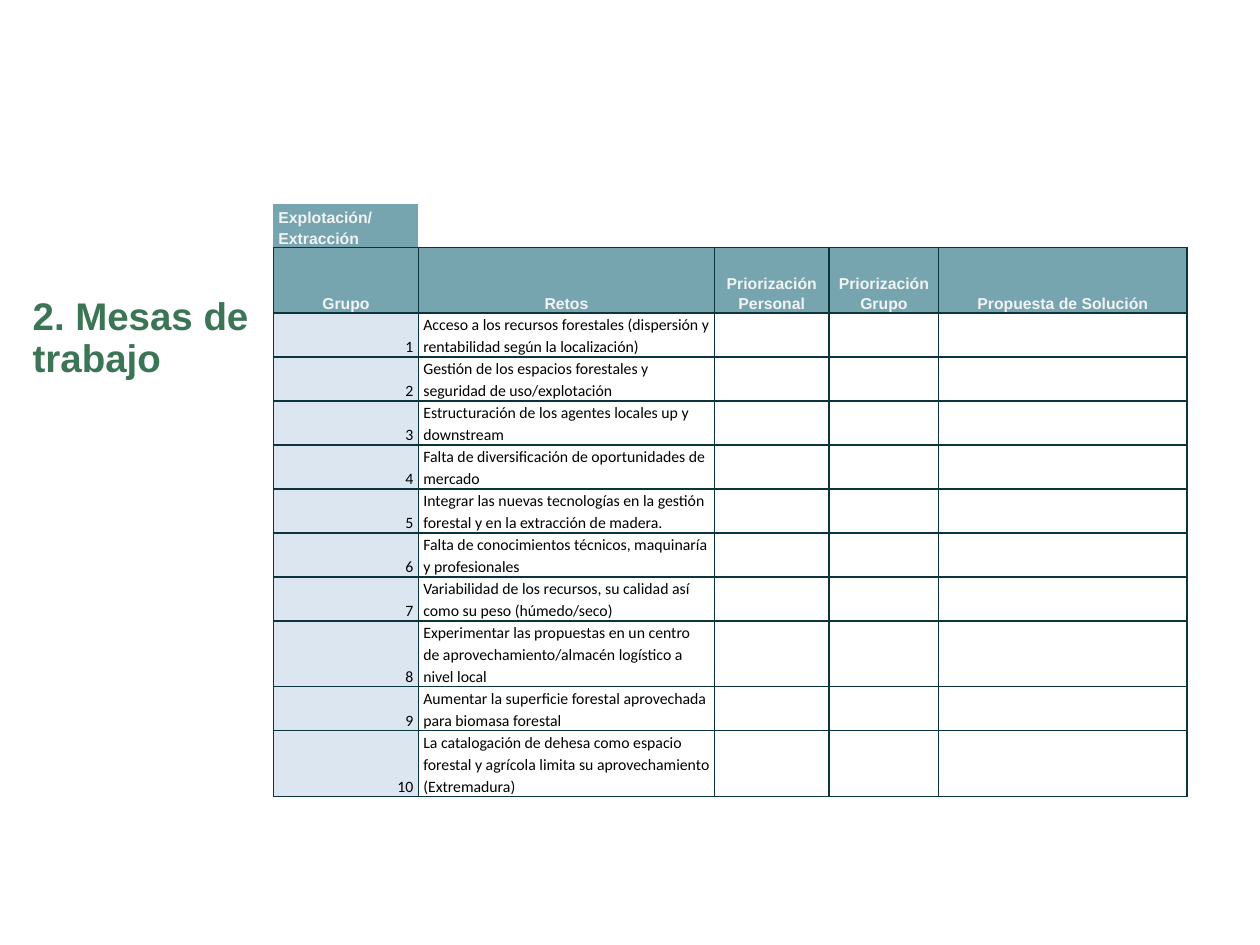
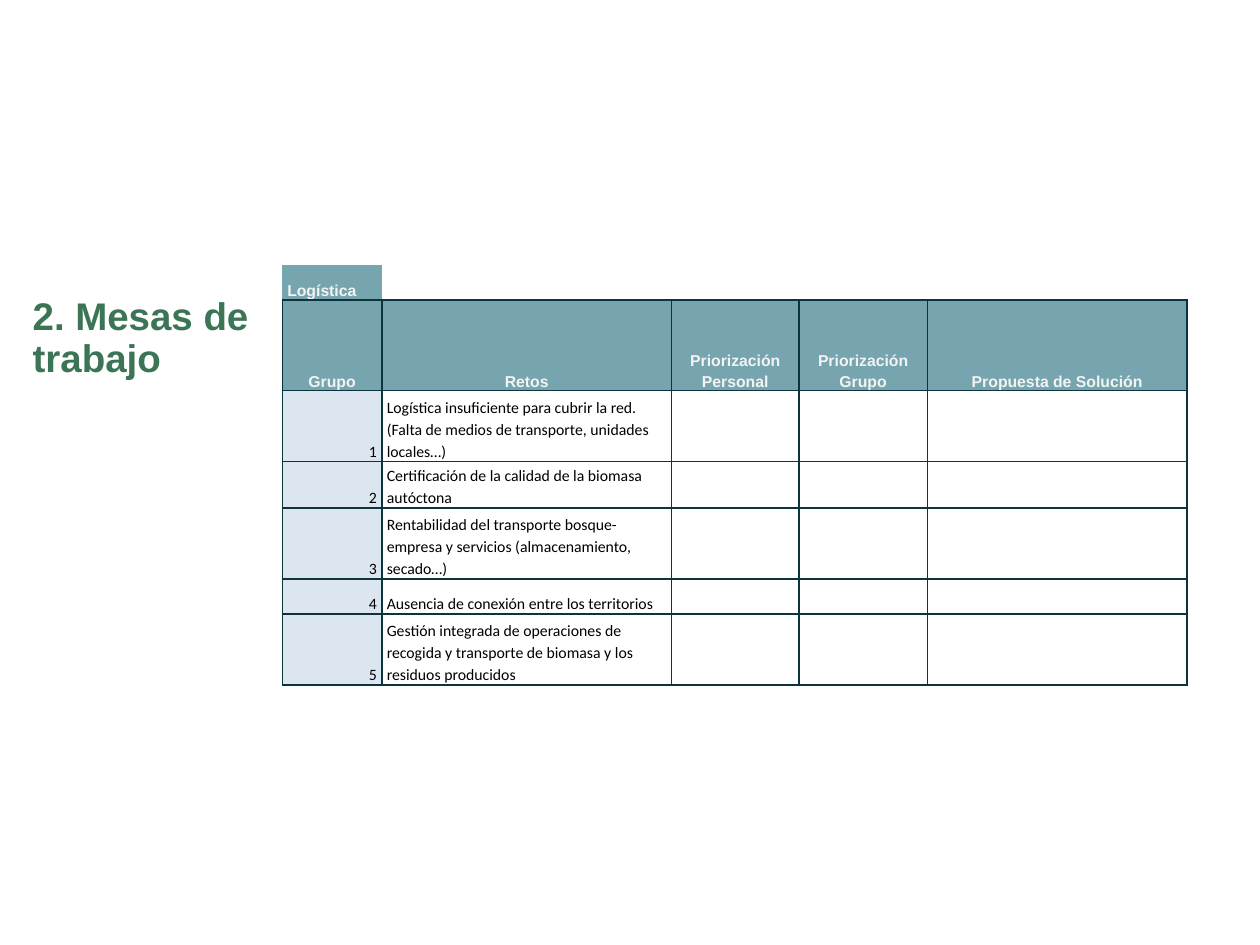
from lxml.etree import SubElement as Sub
from pptx import Presentation
from pptx.dml.color import RGBColor as Color
from pptx.enum.text import MSO_ANCHOR as Anchor, MSO_AUTO_SIZE as Auto, PP_ALIGN as Align
from pptx.oxml.ns import qn
from pptx.util import Inches, Pt

HUES = {"title": "3B7555", "line": "0C343D", "head": "76A5AF",
        "num": "DCE6F1", "light": "F3F3F3", "dark": "000000"}
WIDTH, HEIGHT = Inches(10), Inches(7.5)
PLAIN = "{2D5ABB26-0587-4C30-8999-92F81FD0307C}"  # table style without lines
HEADS = ["Grupo", "Retos", "Priorización Personal", "Priorización Grupo",
         "Propuesta de Solución"]

# Lengths are percentages of the slide's width or height
EXTRACT = {
    "name": "Explotación/Extracción",
    "left": 21.7, "top": 21.6,
    "cols": [11.5, 23.5, 9.1, 8.7, 19.7],
    "rows": [4.6, 6.9] + [4.6] * 7 + [6.9, 4.6, 6.9],
    "goals": [
        "Acceso a los recursos forestales (dispersión y rentabilidad según la localización)",
        "Gestión de los espacios forestales y seguridad de uso/explotación",
        "Estructuración de los agentes locales up y downstream",
        "Falta de diversificación de oportunidades de mercado",
        "Integrar las nuevas tecnologías en la gestión forestal y en la extracción de madera.",
        "Falta de conocimientos técnicos, maquinaría y profesionales",
        "Variabilidad de los recursos, su calidad así como su peso (húmedo/seco)",
        "Experimentar las propuestas en un centro de aprovechamiento/almacén logístico "
        "a nivel local",
        "Aumentar la superficie forestal aprovechada para biomasa forestal",
        "La catalogación de dehesa como espacio forestal y agrícola limita su "
        "aprovechamiento (Extremadura)",
    ],
}
FREIGHT = {
    "name": "Logística",
    "left": 22.4, "top": 28,
    "cols": [7.9, 23, 10.1, 10.2, 20.6],
    "rows": [3.73, 9.6, 7.5, 4.93, 7.5, 3.73, 7.5],
    "goals": [
        "Logística insuficiente para cubrir la red. (Falta de medios de transporte, "
        "unidades locales…)",
        "Certificación de la calidad de la biomasa autóctona",
        "Rentabilidad del transporte bosque-empresa y servicios (almacenamiento, secado…)",
        "Ausencia de conexión entre los territorios",
        "Gestión integrada de operaciones de recogida y transporte de biomasa y los "
        "residuos producidos",
    ],
}


def wide(share):
    return round(WIDTH * share / 100)


def tall(share):
    return round(HEIGHT * share / 100)


def style(par, size, face, hue, bold, align=Align.LEFT, space=1.15):
    par.alignment, par.line_spacing = align, space
    for run in par.runs:
        font = run.font
        font.size, font.name, font.bold = Pt(size), face, bold
        font.color.rgb = Color.from_string(HUES[hue])


def add_title(slide):
    box = slide.shapes.title
    box.left, box.top = wide(2.6), tall(31.5)
    box.width, box.height = wide(26.8), tall(8.9)
    frame = box.text_frame
    frame.text = "2. Mesas de trabajo"
    frame.word_wrap, frame.auto_size = True, Auto.NONE
    frame.vertical_anchor = Anchor.TOP
    frame.margin_left = frame.margin_right = frame.margin_top = frame.margin_bottom = 0
    style(frame.paragraphs[0], 22, "Arial", "title", True, space=0.9)


def add_edges(cell, sides):
    props = cell._tc.get_or_add_tcPr()
    for side in sides:
        edge = Sub(props, qn(f"a:ln{side}"), w=str(Pt(1)))
        fill = Sub(edge, qn("a:solidFill"))
        Sub(fill, qn("a:srgbClr"), val=HUES["line"])


def fill_cell(cell, text, sides, fill=None, head=False, align=Align.LEFT):
    add_edges(cell, sides)
    if fill:
        cell.fill.solid()
        cell.fill.fore_color.rgb = Color.from_string(HUES[fill])
    else:
        cell.fill.background()
    cell.margin_left = cell.margin_right = Inches(0.04)
    cell.margin_top = cell.margin_bottom = 0
    cell.vertical_anchor = Anchor.BOTTOM
    par = cell.text_frame.paragraphs[0]
    if text:
        par.text = text
        face, hue = ("Arial", "light") if head else ("Calibri", "dark")
        style(par, 9, face, hue, head, align)
    else:  # keep blank cells from stretching their row
        Sub(par._p, qn("a:endParaRPr"), sz="900")


def add_grid(slide, desk):
    cols, rows = desk["cols"], desk["rows"]
    frame = slide.shapes.add_table(len(rows), len(cols), wide(desk["left"]),
                                   tall(desk["top"]), wide(sum(cols)), tall(sum(rows)))
    grid = frame.table
    grid._tbl.tblPr.find(qn("a:tableStyleId")).text = PLAIN
    grid.first_row = grid.horz_banding = False
    for col, share in zip(grid.columns, cols):
        col.width = wide(share)
    for row, share in zip(grid.rows, rows):
        row.height = tall(share)

    # Name of the desk, then the column heads
    for c, head in enumerate(HEADS):
        name, fill = (desk["name"], "head") if c == 0 else ("", None)
        fill_cell(grid.cell(0, c), name, "B", fill, True)
        fill_cell(grid.cell(1, c), head, "LRTB", "head", True, Align.CENTER)

    # Numbered goals with blanks to fill in
    for n, goal in enumerate(desk["goals"], 1):
        fill_cell(grid.cell(n + 1, 0), str(n), "LRTB", "num", align=Align.RIGHT)
        for c, text in enumerate([goal, "", "", ""], 1):
            fill_cell(grid.cell(n + 1, c), text, "LRTB")


def main():
    deck = Presentation()
    deck.slide_width, deck.slide_height = WIDTH, HEIGHT
    for desk in (EXTRACT, FREIGHT):
        slide = deck.slides.add_slide(deck.slide_layouts[5])
        add_title(slide)
        add_grid(slide, desk)
    deck.save("out.pptx")


if __name__ == "__main__":
    main()
